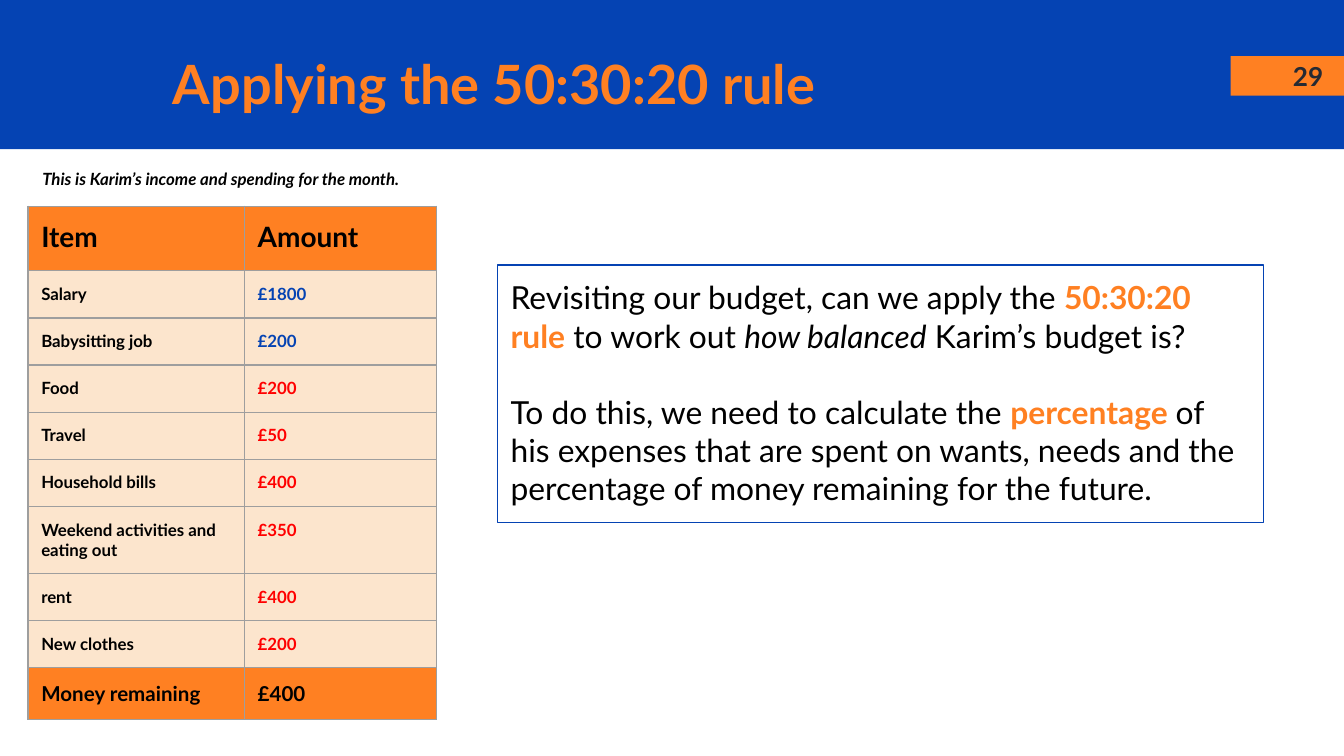
"""Build the slide on applying the 50:30:20 rule to a monthly budget."""
from lxml import etree
from pptx import Presentation
from pptx.dml.color import RGBColor
from pptx.enum.shapes import MSO_SHAPE
from pptx.enum.text import MSO_ANCHOR, PP_ALIGN
from pptx.oxml.ns import qn
from pptx.util import Cm, Pt

RECTANGLE = MSO_SHAPE.RECTANGLE
TOP, MIDDLE = MSO_ANCHOR.TOP, MSO_ANCHOR.MIDDLE
LEFT, RIGHT = PP_ALIGN.LEFT, PP_ALIGN.RIGHT
FONT = "Lato"
INSET = Cm(0.25)
COLORS = {
    "blue": "0543B3",
    "orange": "FF8022",
    "peach": "FCE5CD",
    "red": "FF0000",
    "black": "000000",
    "charcoal": "262A33",
    "white": "FFFFFF",
    "grid": "9E9E9E",
}
INCOME = [("Salary", "£1800"), ("Babysitting job", "£200")]
SPENDING = [
    ("Food", "£200"),
    ("Travel", "£50"),
    ("Household bills", "£400"),
    ("Weekend activities and eating out", "£350"),
    ("rent", "£400"),
    ("New clothes", "£200"),
]
COLUMN_WIDTHS = [4.09, 3.63]
ROW_HEIGHT, TALL_ROW_HEIGHT = 0.89, 1.27
TALL_ITEM = "Weekend activities and eating out"


def rgb(name):
    """Return the named colour."""
    return RGBColor.from_string(COLORS[name])


def write_text(paragraph, text, size=9, color="black", bold=False, italic=False):
    """Add a formatted run to a paragraph."""
    run = paragraph.add_run()
    run.text = text
    font = run.font
    font.name, font.size = FONT, Pt(size)
    font.bold, font.italic = bold, italic
    font.color.rgb = rgb(color)


def prepare_frame(shape, anchor=TOP, alignment=LEFT):
    """Set insets, wrapping and alignment, and return the first paragraph."""
    frame = shape.text_frame
    frame.word_wrap = True
    frame.vertical_anchor = anchor
    frame.margin_left = frame.margin_right = INSET
    frame.margin_top = frame.margin_bottom = INSET
    paragraph = frame.paragraphs[0]
    paragraph.alignment = alignment
    return paragraph


def add_box(slide, left, top, width, height, fill, line=None):
    """Add a flat rectangle with an optional outline."""
    shape = slide.shapes.add_shape(RECTANGLE, Cm(left), Cm(top), Cm(width), Cm(height))
    shape.shadow.inherit = False
    shape.fill.solid()
    shape.fill.fore_color.rgb = rgb(fill)
    if line:
        shape.line.color.rgb = rgb(line)
        shape.line.width = Pt(0.75)
    else:
        shape.line.fill.background()
    return shape


def add_label(slide, left, top, width, height, text, anchor=TOP, alignment=LEFT, **text_format):
    """Add a text box with one line of text."""
    label = slide.shapes.add_textbox(Cm(left), Cm(top), Cm(width), Cm(height))
    paragraph = prepare_frame(label, anchor, alignment)
    write_text(paragraph, text, **text_format)
    return paragraph


def set_borders(cell):
    """Draw a thin grid line on each side of a cell."""
    properties = cell._tc.get_or_add_tcPr()
    for side in ("lnL", "lnR", "lnT", "lnB"):
        line = etree.SubElement(properties, qn(f"a:{side}"), w=str(Pt(0.75)))
        fill = etree.SubElement(line, qn("a:solidFill"))
        etree.SubElement(fill, qn("a:srgbClr"), val=COLORS["grid"])


def fill_cell(cell, text, fill, **text_format):
    """Give a cell its borders, fill and bold text."""
    set_borders(cell)
    cell.fill.solid()
    cell.fill.fore_color.rgb = rgb(fill)
    cell.margin_left = cell.margin_right = INSET
    cell.margin_top = cell.margin_bottom = INSET
    write_text(cell.text_frame.paragraphs[0], text, bold=True, **text_format)


def add_budget_table(slide, left, top):
    """Add the table of income, spending and money remaining."""
    rows = [("Item", "Amount", 1.22, "orange", 15, "black")]
    for entries, color in ((INCOME, "blue"), (SPENDING, "red")):
        for item, amount in entries:
            height = TALL_ROW_HEIGHT if item == TALL_ITEM else ROW_HEIGHT
            rows.append((item, amount, height, "peach", 9, color))
    rows.append(("Money remaining", "£400", 0.98, "orange", 11, "black"))

    total_height = sum(row[2] for row in rows)
    table = slide.shapes.add_table(
        len(rows), len(COLUMN_WIDTHS), Cm(left), Cm(top),
        Cm(sum(COLUMN_WIDTHS)), Cm(total_height),
    ).table
    for column, width in zip(table.columns, COLUMN_WIDTHS):
        column.width = Cm(width)
    for index, (item, amount, height, fill, size, color) in enumerate(rows):
        table.rows[index].height = Cm(height)
        fill_cell(table.cell(index, 0), item, fill, size=size)
        fill_cell(table.cell(index, 1), amount, fill, size=size, color=color)


def add_task_box(slide):
    """Add the outlined box that explains the task."""
    box = add_box(slide, 9.4, 5.01, 14.48, 4.87, "white", line="blue")
    highlight = {"color": "orange", "bold": True}
    question = prepare_frame(box)
    method = box.text_frame.add_paragraph()
    method.alignment = LEFT
    method.space_before = Pt(20.4)
    parts = [
        (question, "Revisiting our budget, can we apply the ", {}),
        (question, "50:30:20 rule", highlight),
        (question, " to work out ", {}),
        (question, "how balanced", {"italic": True}),
        (question, " Karim’s budget is?", {}),
        (method, "To do this, we need to calculate the ", {}),
        (method, "percentage ", highlight),
        (method, "of his expenses that are spent on wants, needs and the "
                 "percentage of money remaining for the future.", {}),
    ]
    for paragraph, text, text_format in parts:
        write_text(paragraph, text, size=17, **text_format)


def main():
    """Build and save the presentation."""
    presentation = Presentation()
    presentation.slide_width, presentation.slide_height = Cm(25.4), Cm(14.29)
    slide = presentation.slides.add_slide(presentation.slide_layouts[6])

    add_box(slide, 0, 0, 25.4, 2.82, "blue")
    add_box(slide, 23.26, 1.06, 2.14, 0.75, "orange")
    add_label(slide, 23.26, 1.06, 2, 0.75, "29", MIDDLE, RIGHT,
              size=14, color="charcoal", bold=True)
    title = add_label(slide, 3.02, 0.51, 17.02, 1.75, "Applying the 50:30:20 rule",
                      size=29, color="orange", bold=True)
    title.line_spacing = 1.15
    add_task_box(slide)
    add_label(slide, 0.55, 2.99, 7.85, 0.89,
              "This is Karim’s income and spending for the month.", bold=True, italic=True)
    add_budget_table(slide, 0.53, 3.9)
    presentation.save("out.pptx")


if __name__ == "__main__":
    main()
